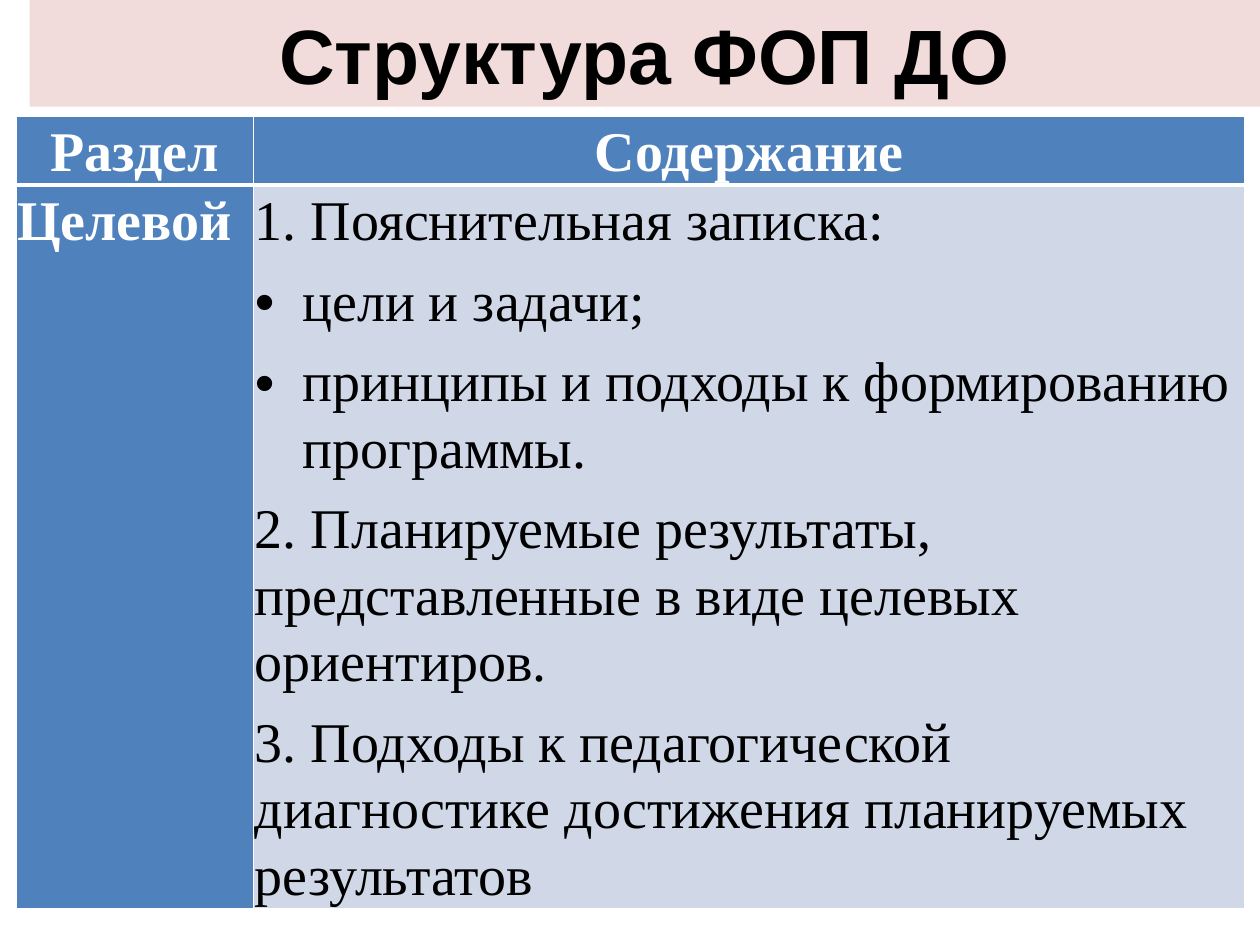
import pptx
import pptx.util
import pptx.dml.color
import pptx.enum.shapes
import pptx.enum.text
import pptx.oxml.ns
import lxml.etree

Pt = pptx.util.Pt
RGBColor = pptx.dml.color.RGBColor
ALIGN = pptx.enum.text.PP_ALIGN
ANCHOR = pptx.enum.text.MSO_ANCHOR
qn = pptx.oxml.ns.qn

BLACK = RGBColor(0x00, 0x00, 0x00)
WHITE = RGBColor(0xFF, 0xFF, 0xFF)
PINK = RGBColor(0xF2, 0xDC, 0xDB)
BLUE = RGBColor(0x4F, 0x81, 0xBD)
PALE = RGBColor(0xD0, 0xD8, 0xE8)


def add_run(p, text, font, size, color, bold):
    r = p.add_run()
    r.text = text
    r.font.name = font
    r.font.size = Pt(size)
    r.font.bold = bold
    r.font.color.rgb = color


def add_border(cell, side, width):
    tc_pr = cell._tc.get_or_add_tcPr()
    ln = lxml.etree.SubElement(tc_pr, qn("a:ln" + side), w=str(Pt(width)))
    fill = lxml.etree.SubElement(ln, qn("a:solidFill"))
    lxml.etree.SubElement(fill, qn("a:srgbClr"), val=str(WHITE))


prs = pptx.Presentation()
prs.slide_width, prs.slide_height = Pt(720), Pt(540)
s = prs.slides.add_slide(prs.slide_layouts[6])

# Title band
sp = s.shapes.add_shape(pptx.enum.shapes.MSO_SHAPE.RECTANGLE,
                        Pt(17), Pt(0), Pt(703), Pt(61))
sp.shadow.inherit = False
sp.fill.solid()
sp.fill.fore_color.rgb = PINK
sp.line.fill.background()
tf = sp.text_frame
tf.word_wrap = True
tf.vertical_anchor = ANCHOR.MIDDLE
p = tf.paragraphs[0]
p.alignment = ALIGN.CENTER
add_run(p, "Структура ФОП ДО", "Arial", 44, BLACK, True)

# Table: each cell holds (text, bulleted) paragraphs
rows = [
    [[("Раздел", False)], [("Содержание", False)]],
    [[("Целевой", False)],
     [("1. Пояснительная записка:", False),
      ("цели и задачи;", True),
      ("принципы и подходы к формированию программы.", True),
      ("2. Планируемые результаты, представленные в виде целевых ориентиров.", False),
      ("3. Подходы к педагогической диагностике достижения планируемых результатов", False)]],
]
table = s.shapes.add_table(2, 2, Pt(9), Pt(66.3), Pt(702.5), Pt(451)).table
table.horz_banding = False
for column, width in zip(table.columns, (136, 566.5)):
    column.width = Pt(width)
for row, height in zip(table.rows, (38.5, 412.5)):
    row.height = Pt(height)

for i, row in enumerate(rows):
    for j, paragraphs in enumerate(row):
        cell = table.cell(i, j)
        is_header = i == 0
        is_content = i == 1 and j == 1

        # Borders, with a thick rule between header and body
        add_border(cell, "L", 1)
        add_border(cell, "R", 1)
        add_border(cell, "T", 1 if is_header else 3)
        add_border(cell, "B", 3 if is_header else 1)
        cell.fill.solid()
        cell.fill.fore_color.rgb = PALE if is_content else BLUE
        cell.margin_left = cell.margin_right = Pt(0.72)
        cell.margin_top = cell.margin_bottom = Pt(0.72)
        cell.vertical_anchor = ANCHOR.MIDDLE if is_header else ANCHOR.TOP

        # Text
        tf = cell.text_frame
        for n, (text, bulleted) in enumerate(paragraphs):
            p = tf.add_paragraph() if n else tf.paragraphs[0]
            p.alignment = ALIGN.CENTER if is_header else ALIGN.LEFT
            p.line_spacing = 1.07
            p.space_after = Pt(8 if is_content else 0)
            if bulleted:
                p_pr = p._p.get_or_add_pPr()
                p_pr.set("marL", str(Pt(27)))
                p_pr.set("indent", str(Pt(-27)))
                lxml.etree.SubElement(p_pr, qn("a:buFont"), typeface="Arial")
                lxml.etree.SubElement(p_pr, qn("a:buChar"), char="•")
            add_run(p, text, "Times New Roman", 32,
                    BLACK if is_content else WHITE, not is_content)

prs.save("out.pptx")
